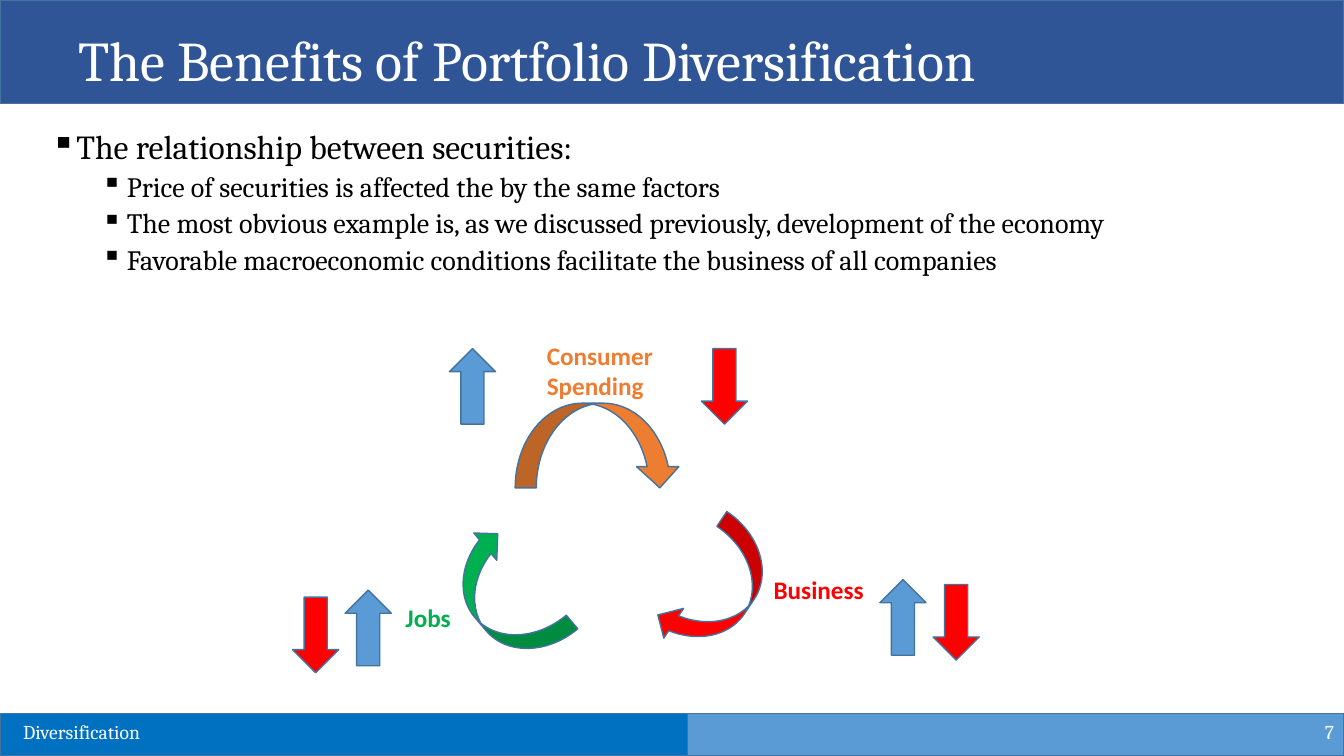
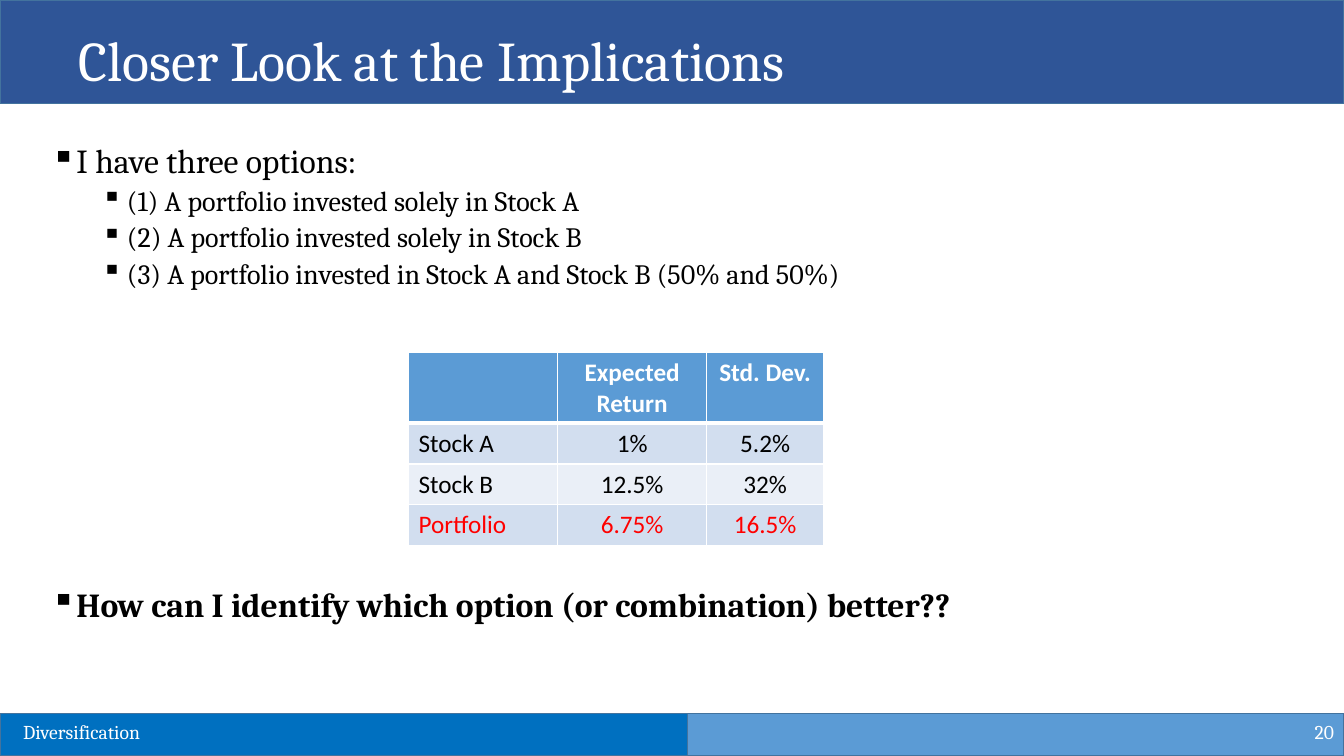
from lxml.etree import SubElement
from pptx import Presentation
from pptx.dml.color import RGBColor
from pptx.enum.shapes import MSO_SHAPE as Shape
from pptx.enum.text import MSO_ANCHOR as Anchor
from pptx.enum.text import MSO_AUTO_SIZE as AutoSize
from pptx.enum.text import PP_ALIGN as Align
from pptx.oxml.ns import qn
from pptx.util import Pt

# Colours
WHITE = RGBColor(0xFF, 0xFF, 0xFF)
BLACK = RGBColor(0x00, 0x00, 0x00)
NAVY = RGBColor(0x2F, 0x55, 0x97)
BLUE = RGBColor(0x00, 0x70, 0xC0)
SKY = RGBColor(0x5B, 0x9B, 0xD5)
OUTLINE = RGBColor(0x43, 0x73, 0x9E)
ORANGE = RGBColor(0xED, 0x7D, 0x31)
RED = RGBColor(0xFF, 0x00, 0x00)
GREEN = RGBColor(0x00, 0xB0, 0x50)
BAND_DARK = RGBColor(0xD2, 0xDE, 0xEF)
BAND_LIGHT = RGBColor(0xEA, 0xEF, 0xF7)

# Page layout, in points
WIDTH, HEIGHT = 960, 540
TITLE_BAND = 74
FOOTER_TOP = 509.6
FOOTER_SPLIT = 491
BODY_LEFT, BODY_WIDTH = 29.5, 906.5
ARROW_WIDTH, ARROW_HEIGHT = 33, 54

# Text formats
TITLE = {"name": "Cambria", "size": Pt(40), "color": WHITE}
FOOTER = {"name": "Cambria", "size": Pt(14), "color": WHITE}
LEVELS = [
    {"name": "Cambria", "size": Pt(24), "color": BLACK},
    {"name": "Cambria", "size": Pt(20), "color": BLACK},
]
LABEL = {"name": "Calibri", "size": Pt(18), "bold": True}
CELL = {"name": "Calibri", "size": Pt(18), "bold": False, "color": BLACK}


def apply_format(font, values):
    for name, value in values.items():
        if name == "color":
            font.color.rgb = value
        else:
            setattr(font, name, value)


class Deck:
    def __init__(self):
        self.presentation = Presentation()
        self.presentation.slide_width = Pt(WIDTH)
        self.presentation.slide_height = Pt(HEIGHT)
        self.slide = None

    def new_slide(self, title, number):
        blank = self.presentation.slide_layouts[6]
        self.slide = self.presentation.slides.add_slide(blank)
        # Title band
        self.shape(Shape.RECTANGLE, 0, 0, WIDTH, TITLE_BAND, NAVY)
        self.text(title, 49, 15, 870, 55.5, TITLE)
        # Footer
        footer_height = HEIGHT - FOOTER_TOP
        self.shape(Shape.RECTANGLE, 0, FOOTER_TOP, FOOTER_SPLIT, footer_height, BLUE)
        self.shape(Shape.RECTANGLE, FOOTER_SPLIT, FOOTER_TOP,
                   WIDTH - FOOTER_SPLIT, footer_height, SKY)
        self.text(str(number), 744, 508.5, 216, 28.8, FOOTER,
                  Align.RIGHT, Anchor.MIDDLE)
        self.text("Diversification", 9.4, 510.5, 399, 24.5, FOOTER)

    def shape(self, kind, left, top, width, height, color, rotation=0):
        shape = self.slide.shapes.add_shape(
            kind, Pt(left), Pt(top), Pt(width), Pt(height))
        shape.shadow.inherit = False
        shape.rotation = rotation
        shape.fill.solid()
        shape.fill.fore_color.rgb = color
        shape.line.color.rgb = OUTLINE
        shape.line.width = Pt(1)

    def frame(self, left, top, width, height):
        box = self.slide.shapes.add_textbox(
            Pt(left), Pt(top), Pt(width), Pt(height))
        box.text_frame.word_wrap = True
        return box.text_frame

    def text(self, text, left, top, width, height, values,
             align=Align.LEFT, anchor=Anchor.TOP):
        frame = self.frame(left, top, width, height)
        frame.vertical_anchor = anchor
        if anchor == Anchor.TOP:
            frame.auto_size = AutoSize.SHAPE_TO_FIT_TEXT
        paragraph = frame.paragraphs[0]
        paragraph.alignment = align
        run = paragraph.add_run()
        run.text = text
        apply_format(run.font, values)

    def bullets(self, top, height, items, bold=False):
        """Items are (level, text) pairs."""
        frame = self.frame(BODY_LEFT, top, BODY_WIDTH, height)
        for index, (level, text) in enumerate(items):
            paragraph = frame.add_paragraph() if index else frame.paragraphs[0]
            paragraph.level = level
            paragraph.alignment = Align.JUSTIFY
            paragraph.space_after = Pt(2)
            properties = paragraph._p.get_or_add_pPr()
            properties.set("marL", str(Pt(18 + 36 * level)))
            properties.set("indent", str(Pt(-18)))
            SubElement(properties, qn("a:buChar")).set("char", "▪")
            run = paragraph.add_run()
            run.text = text
            apply_format(run.font, {**LEVELS[level], "bold": bold})

    def trend_arrow(self, rising, left, top):
        kind, color = (Shape.UP_ARROW, SKY) if rising else (Shape.DOWN_ARROW, RED)
        self.shape(kind, left, top, ARROW_WIDTH, ARROW_HEIGHT, color)

    def table(self, left, top, widths, heights, rows):
        table = self.slide.shapes.add_table(
            len(heights), len(widths), Pt(left), Pt(top),
            Pt(sum(widths)), Pt(sum(heights))).table
        for column, width in zip(table.columns, widths):
            column.width = Pt(width)
        for row, height in zip(table.rows, heights):
            row.height = Pt(height)
        for row_index, (fill, values, texts) in enumerate(rows):
            for column_index, text in enumerate(texts):
                cell = table.cell(row_index, column_index)
                self.cell_borders(cell, row_index)
                cell.fill.solid()
                cell.fill.fore_color.rgb = fill
                cell.text = text
                centred = row_index == 0 or column_index > 0
                for paragraph in cell.text_frame.paragraphs:
                    paragraph.alignment = Align.CENTER if centred else Align.LEFT
                    apply_format(paragraph.font, values)
                    for run in paragraph.runs:
                        apply_format(run.font, values)

    def cell_borders(self, cell, row_index):
        """White rules, with a heavy one below the header."""
        heavy_side = {0: "lnB", 1: "lnT"}.get(row_index)
        properties = cell._tc.get_or_add_tcPr()
        for side in ("lnL", "lnR", "lnT", "lnB"):
            line = SubElement(properties, qn(f"a:{side}"))
            line.set("w", str(Pt(3 if side == heavy_side else 1)))
            fill = SubElement(line, qn("a:solidFill"))
            SubElement(fill, qn("a:srgbClr")).set("val", str(WHITE))


def add_benefits(deck):
    deck.new_slide("The Benefits of Portfolio Diversification", 7)
    deck.bullets(86.5, 421, [
        (0, "The relationship between securities:"),
        (1, "Price of securities is affected the by the same factors"),
        (1, "The most obvious example is, as we discussed previously, "
            "development of the economy"),
        (1, "Favorable macroeconomic conditions facilitate the business "
            "of all companies"),
    ])
    # Cycle of curved arrows
    deck.shape(Shape.CURVED_DOWN_ARROW, 368, 288, 118.5, 60.5, ORANGE)
    for left, top, rotation, color in [(486.7, 371, 33.7, RED),
                                       (335, 376, 139.9, GREEN)]:
        deck.shape(Shape.CURVED_LEFT_ARROW, left, top, 51, 101.5, color, rotation)
    # Cycle labels
    for text, left, top, width, height, color in [
            ("Consumer Spending", 383.5, 239.5, 98, 51, ORANGE),
            ("Business", 545.5, 407, 145, 29, RED),
            ("Jobs", 282.5, 426.5, 71, 29, GREEN)]:
        deck.text(text, left, top, width, height, {**LABEL, "color": color})
    # Rising and falling arrows beside each label
    for rising, left, top in [
            (True, 321, 249), (True, 246.5, 421.5), (True, 628.5, 414),
            (False, 501, 249), (False, 666.5, 417.5), (False, 209, 426.5)]:
        deck.trend_arrow(rising, left, top)


def add_implications(deck):
    deck.new_slide("Closer Look at the Implications", 20)
    deck.bullets(96.5, 130, [
        (0, "I have three options:"),
        (1, "(1) A portfolio invested solely in Stock A"),
        (1, "(2) A portfolio invested solely in Stock B"),
        (1, "(3) A portfolio invested in Stock A and Stock B (50% and 50%)"),
    ])
    header = {**CELL, "bold": True, "color": WHITE}
    deck.table(291.8, 251.8, [106.5, 106.5, 83.5], [50.4, 29.2, 29.2, 29.2], [
        (SKY, header, ["", "Expected\nReturn", "Std. Dev."]),
        (BAND_DARK, CELL, ["Stock A", "1%", "5.2%"]),
        (BAND_LIGHT, CELL, ["Stock B", "12.5%", "32%"]),
        (BAND_DARK, {**CELL, "color": RED}, ["Portfolio", "6.75%", "16.5%"]),
    ])
    deck.bullets(413.5, 40, [
        (0, "How can I identify which option (or combination) better??"),
    ], bold=True)


def main():
    deck = Deck()
    add_benefits(deck)
    add_implications(deck)
    deck.presentation.save("out.pptx")


if __name__ == "__main__":
    main()
